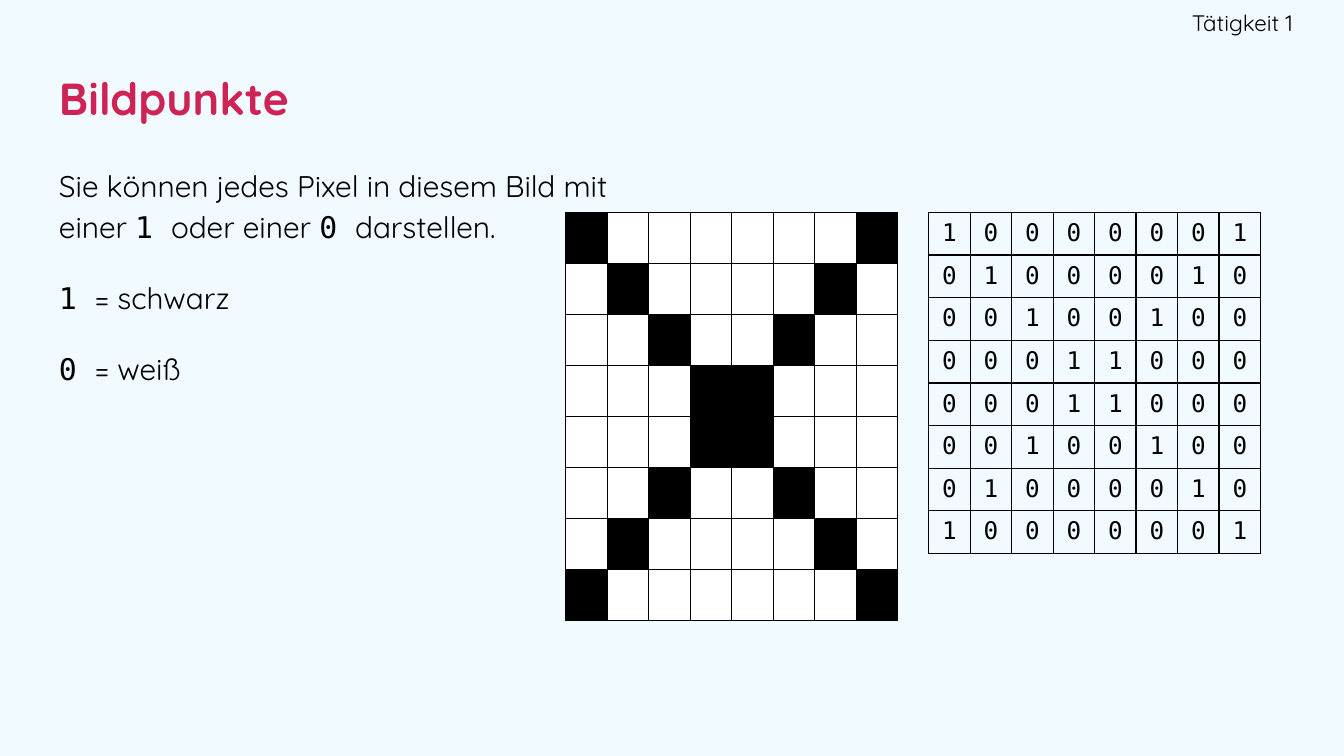
from lxml import etree
from pptx import Presentation
from pptx import util as u
from pptx.dml import color
from pptx.enum import text
from pptx.oxml import ns

SANS, MONO = "Quicksand", "DejaVu Sans Mono"
BLACK, WHITE, PINK, SKY = "000000", "FFFFFF", "CD2355", "F1FAFF"
SIDE = 8


def paint(fill, shade):
    fill.solid()
    fill.fore_color.rgb = color.RGBColor.from_string(shade)


def add_run(para, words, size, face=SANS, shade=BLACK, bold=False):
    run = para.add_run()
    run.text = words
    font = run.font
    font.size, font.name, font.bold = u.Pt(size), face, bold
    paint(font.fill, shade)


def add_box(slide, left, top, width, height, anchor, right=0.1):
    box = slide.shapes.add_textbox(*map(u.Inches, (left, top, width, height)))
    frame = box.text_frame
    frame.word_wrap = True
    frame.vertical_anchor = anchor
    frame.margin_left = frame.margin_top = frame.margin_bottom = u.Inches(0.1)
    frame.margin_right = u.Inches(right)
    return frame


def add_edges(cell):
    props = cell._tc.get_or_add_tcPr()
    for side in ("lnL", "lnR", "lnT", "lnB"):
        line = etree.SubElement(props, ns.qn("a:" + side), w=str(u.Pt(0.75)))
        fill = etree.SubElement(line, ns.qn("a:solidFill"))
        etree.SubElement(fill, ns.qn("a:srgbClr"), val=BLACK)


def add_grid(slide, left, height, draw):
    """Add a square bit table; draw(cell, bit) fills in each cell."""
    frame = slide.shapes.add_table(
        SIDE, SIDE, u.Inches(left), u.Inches(1.58), u.Inches(2.47), u.Inches(height))
    table = frame.table
    table.first_row = table.horz_banding = False
    for r in range(SIDE):
        for c in range(SIDE):
            cell = table.cell(r, c)
            add_edges(cell)
            # Both diagonals are set to 1
            draw(cell, c in (r, SIDE - 1 - r))


def set_margins(cell, gap):
    cell.margin_left = cell.margin_right = u.Inches(gap)
    cell.margin_top = cell.margin_bottom = u.Inches(gap)


def draw_pixel(cell, bit):
    set_margins(cell, 0)
    paint(cell.fill, BLACK if bit else WHITE)


def draw_digit(cell, bit):
    set_margins(cell, 0.05)
    cell.fill.background()
    para = cell.text_frame.paragraphs[0]
    para.alignment = text.PP_ALIGN.CENTER
    add_run(para, "1" if bit else "0", 13, MONO)


def add_body(slide):
    frame = add_box(slide, 0.34, 1.11, 4.48, 4, text.MSO_ANCHOR.TOP)
    lines = [
        [("Sie können jedes Pixel in diesem Bild mit einer ", SANS), ("1 ", MONO),
         ("oder einer ", SANS), ("0 ", MONO), ("darstellen.", SANS)],
        [("1 ", MONO), ("= schwarz", SANS)],
        [("0 ", MONO), ("= weiß", SANS)],
    ]
    for i, line in enumerate(lines):
        para = frame.add_paragraph() if i else frame.paragraphs[0]
        para.line_spacing = 1.15
        if i:
            para.space_before = u.Pt(16)
        for words, face in line:
            add_run(para, words, 16, face)


def main():
    # Widescreen slide, 16:9
    deck = Presentation()
    deck.slide_width = u.Inches(10)
    deck.slide_height = u.Inches(10 * 9 / 16)
    slide = deck.slides.add_slide(deck.slide_layouts[6])
    paint(slide.background.fill, SKY)

    # Title
    title = add_box(slide, 0.34, 0.35, 9.32, 0.76, text.MSO_ANCHOR.MIDDLE)
    add_run(title.paragraphs[0], "Bildpunkte", 24, shade=PINK, bold=True)

    # Pixel image and its bits
    add_grid(slide, 4.21, 3.04, draw_pixel)
    add_grid(slide, 6.91, 2.53, draw_digit)

    # Explanation
    add_body(slide)

    # Activity label
    label = add_box(slide, 7.48, 0, 2.14, 0.34, text.MSO_ANCHOR.MIDDLE, right=0)
    label.paragraphs[0].alignment = text.PP_ALIGN.RIGHT
    add_run(label.paragraphs[0], "Tätigkeit 1", 12)

    deck.save("out.pptx")


if __name__ == "__main__":
    main()
